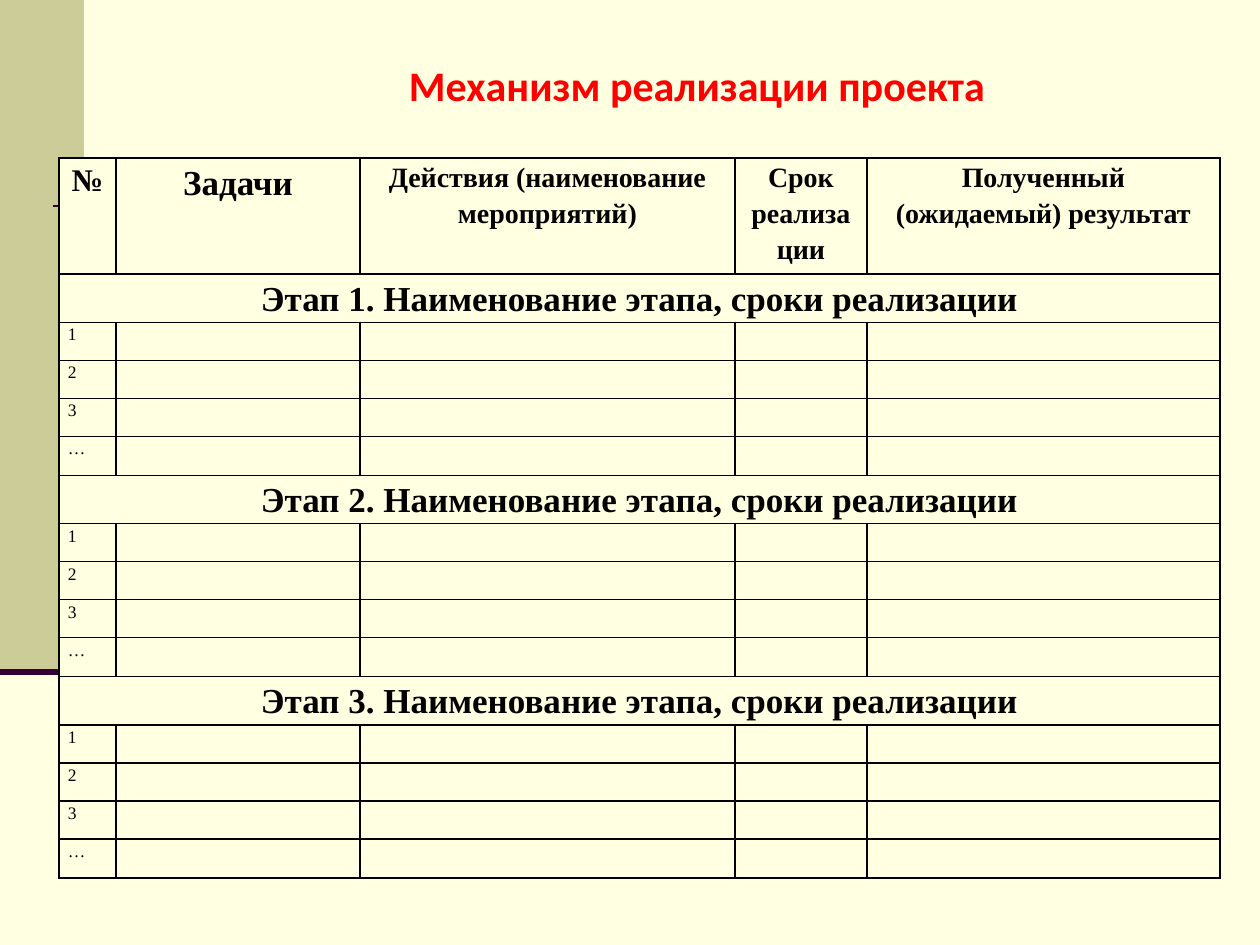
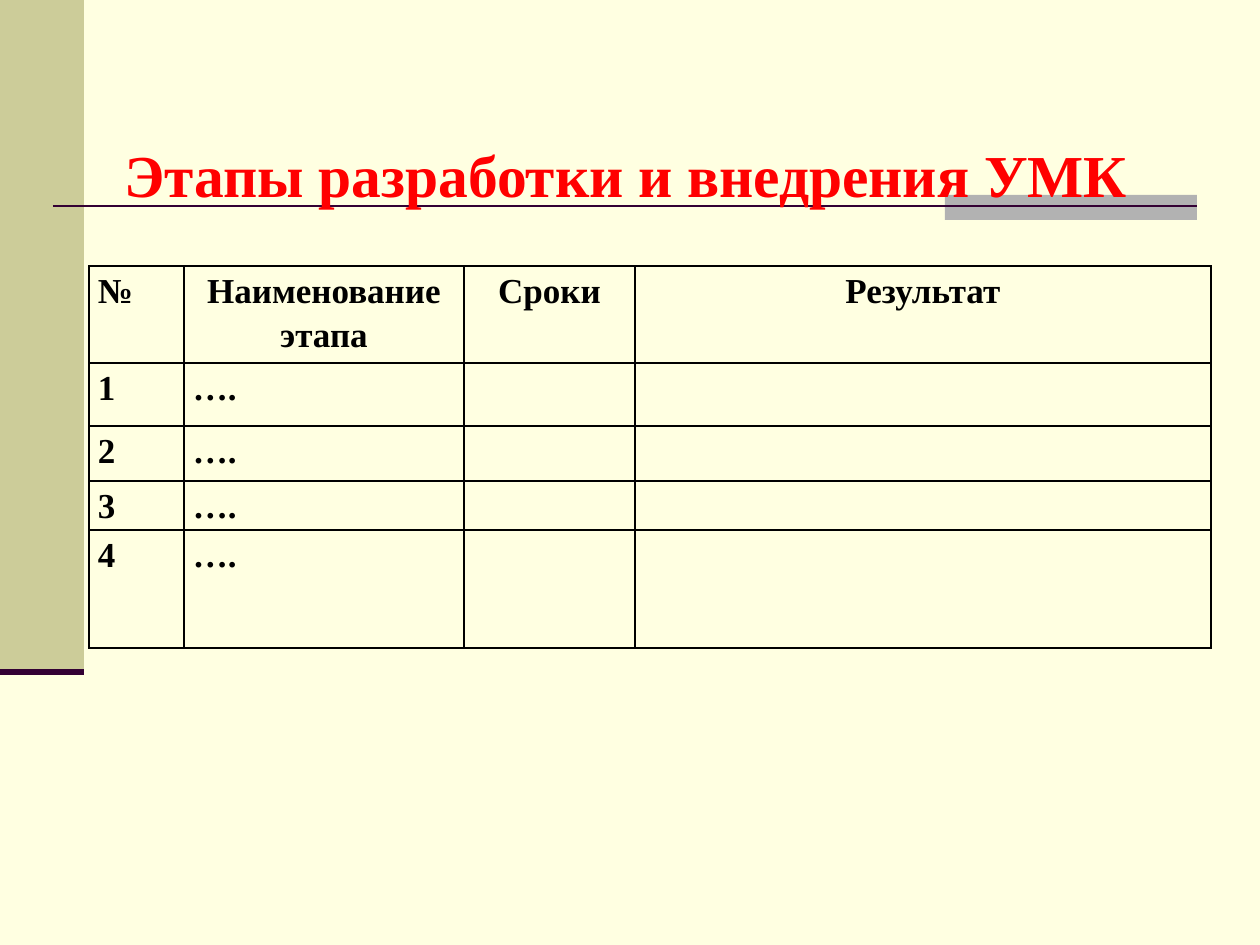
import pptx
import pptx.util
import pptx.dml.color
import pptx.enum.shapes
import pptx.enum.text
import pptx.oxml.ns
from lxml import etree

PX = 914400 / 126
HUES = {
    "page": "FFFFE1",
    "band": "CCCC99",
    "bar": "B2B2B2",
    "rule": "330033",
    "title": "FF0000",
    "ink": "000000",
}
SERIF = "Times New Roman"
ALIGN = pptx.enum.text.PP_ALIGN
MID = ALIGN.CENTER
JUST = ALIGN.JUSTIFY


def emu(px):
    return pptx.util.Emu(round(px * PX))


def hue(name):
    return pptx.dml.color.RGBColor.from_string(HUES[name])


def paint(fill, name):
    fill.solid()
    fill.fore_color.rgb = hue(name)


def add_rect(slide, box, name):
    kind = pptx.enum.shapes.MSO_SHAPE.RECTANGLE
    rect = slide.shapes.add_shape(kind, *map(emu, box))
    rect.shadow.inherit = False
    paint(rect.fill, name)
    rect.line.fill.background()


def add_rule(slide, left, right, y, width):
    kind = pptx.enum.shapes.MSO_CONNECTOR.STRAIGHT
    rule = slide.shapes.add_connector(kind, *map(emu, (left, y, right, y)))
    rule.line.color.rgb = hue("rule")
    rule.line.width = pptx.util.Pt(width)
    etree.SubElement(rule._element.spPr, pptx.oxml.ns.qn("a:effectLst"))


def add_page(deck):
    slide = deck.slides.add_slide(deck.slide_layouts[6])
    paint(slide.background.fill, "page")
    add_rect(slide, (0, 0, 84, 672), "band")
    add_rect(slide, (945, 195, 252, 25), "bar")
    add_rule(slide, 53, 1197, 206, 1.5)
    add_rule(slide, 0, 84, 672, 3.5)
    return slide


def style(para, text, size, align, face=SERIF, tone="ink", bold=True):
    para.text = text
    para.alignment = align
    para.font.name = face
    para.font.size = pptx.util.Pt(size)
    para.font.bold = bold
    para.font.color.rgb = hue(tone)


def add_title(slide, box, text, size, face):
    frame = slide.shapes.add_textbox(*map(emu, box)).text_frame
    frame.word_wrap = True
    frame.vertical_anchor = pptx.enum.text.MSO_ANCHOR.MIDDLE
    style(frame.paragraphs[0], text, size, MID, face, "title")


def add_edges(cell):
    props = cell._tc.get_or_add_tcPr()
    qn = pptx.oxml.ns.qn
    for side in "LRTB":
        edge = etree.SubElement(props, qn("a:ln" + side), w=str(pptx.util.Pt(1)))
        fill = etree.SubElement(edge, qn("a:solidFill"))
        etree.SubElement(fill, qn("a:srgbClr"), val=HUES["ink"])


def add_grid(slide, left, top, cols, rows):
    box = (left, top, sum(cols), sum(rows))
    grid = slide.shapes.add_table(len(rows), len(cols), *map(emu, box)).table
    grid.first_row = grid.horz_banding = False
    for col, width in zip(grid.columns, cols):
        col.width = emu(width)
    for row, height in zip(grid.rows, rows):
        row.height = emu(height)
    for cell in grid.iter_cells():
        cell.margin_left = cell.margin_right = emu(9)
        cell.margin_top = cell.margin_bottom = 0
        add_edges(cell)
        paint(cell.fill, "page")
        cell.text_frame.paragraphs[0].font.size = pptx.util.Pt(10)
    return grid


def write(cell, text, size, align, bold=True):
    para = cell.text_frame.paragraphs[0]
    style(para, text, size, align, bold=bold)
    para.line_spacing = 1.15


def add_plan(slide, left, top):
    heads = [
        ("№", 18),
        ("Задачи", 20),
        ("Действия (наименование мероприятий)", 16),
        ("Срок реализации", 16),
        ("Полученный (ожидаемый) результат", 16),
    ]
    marks = ["1", "2", "3", "…"]
    stage = [48, 38, 38, 38, 39]
    grid = add_grid(slide, left, top, [57, 244, 375, 132, 353], [116] + stage * 3)
    for col, (text, size) in enumerate(heads):
        write(grid.cell(0, col), text, size, MID)
    for step in range(3):
        first = 1 + step * len(stage)
        lead = grid.cell(first, 0)
        lead.merge(grid.cell(first, len(heads) - 1))
        write(lead, f"Этап {step + 1}. Наименование этапа, сроки реализации", 20, MID)
        for row, mark in enumerate(marks, first + 1):
            write(grid.cell(row, 0), mark, 10, JUST, False)


def add_steps(slide, left, top):
    heads = ["№", "Наименование этапа", "Сроки", "Результат"]
    grid = add_grid(slide, left, top, [95, 280, 171, 576], [97, 63, 55, 49, 118])
    for col, text in enumerate(heads):
        write(grid.cell(0, col), text, 20, MID if col else JUST)
    for row in range(1, 5):
        write(grid.cell(row, 0), str(row), 20, JUST)
        write(grid.cell(row, 1), "….", 20, JUST)


def main():
    deck = pptx.Presentation()
    deck.slide_width, deck.slide_height = emu(1260), emu(945)

    plan = add_page(deck)
    add_title(plan, (134, 51, 1126, 68), "Механизм реализации проекта", 24, "Calibri")
    add_plan(plan, 59, 158)

    steps = add_page(deck)
    add_title(steps, (59, 134, 1134, 80), "Этапы разработки и внедрения УМК", 34, SERIF)
    add_steps(steps, 89, 266)

    deck.save("out.pptx")


if __name__ == "__main__":
    main()
